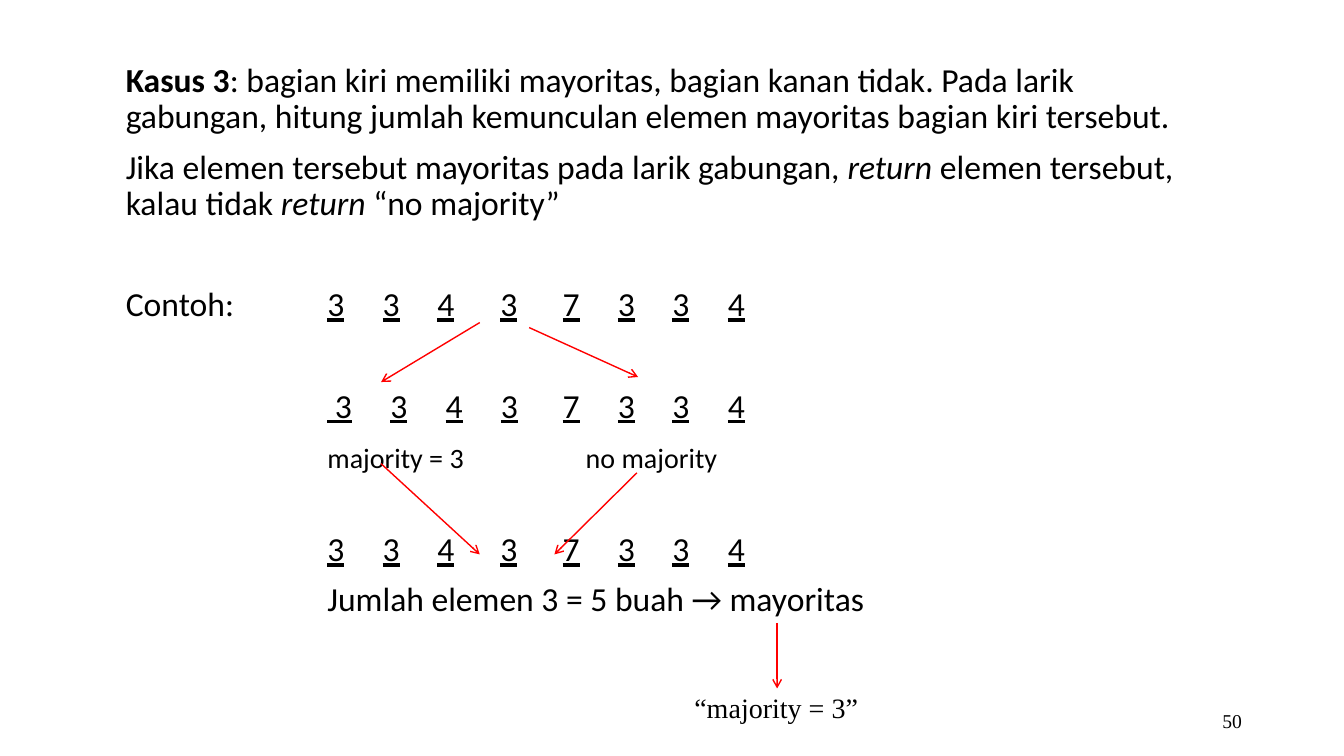
from lxml.etree import SubElement
from pptx import Presentation
from pptx.dml.color import RGBColor
from pptx.enum.shapes import MSO_CONNECTOR
from pptx.enum.text import MSO_ANCHOR, PP_ALIGN
from pptx.oxml.ns import qn
from pptx.util import Pt

COLORS = {"text": "000000", "arrow": "FF0000"}
BODY, SERIF = "Calibri", "Times New Roman"

# Tab stops, measured from the left edge of the text
WHOLE = [144, 183.5, 222.5, 267.5, 312, 351.5, 390.5, 430]
HALVES = [144, 189, 228.5, 268] + WHOLE[4:]
LABELS = [144, 328.5]
ARRAY = "3\t3\t4\t3\t7\t3\t3\t4"

# Each paragraph: runs of (text, style), space before, size, tab stops
LINES = [
    ([("Kasus 3", "b"),
      (": bagian kiri memiliki mayoritas, bagian kanan tidak. Pada larik "
       "gabungan, hitung jumlah kemunculan elemen mayoritas bagian kiri "
       "tersebut.", "")], 0, 24, []),
    ([("Jika elemen tersebut mayoritas pada larik gabungan, ", ""),
      ("return ", "i"), ("elemen tersebut, kalau tidak ", ""),
      ("return", "i"), (" “no majority”", "")], 10, 24, []),
    ([("Contoh:\t", ""), (ARRAY, "u")], 46.5, 24, WHOLE),
    ([("\t", ""), (" 3\t3\t4\t3", "u"), ("\t", ""),
      ("7\t3\t3\t4", "u")], 46.5, 24, HALVES),
    ([("\tmajority = 3\tno majority", "")], 13.5, 20, LABELS),
    ([("\t", ""), (ARRAY, "u")], 41.5, 24, WHOLE),
    ([("\tJumlah elemen 3 = 5 buah → mayoritas", "")], 10, 24, LABELS),
]
RESULT = [([("“majority = 3”", "")], 0, 20, [])]
NUMBER = [([("50", "")], 0, 14, [])]

# Arrows: start x, start y, end x, end y
ARROWS = [
    (342.7, 230.4, 272.2, 272.9),
    (378, 234, 455.8, 269.3),
    (272.2, 331.2, 342.7, 396),
    (455, 337.7, 396, 396),
    (555.1, 445, 555.1, 491.8),
]


def write(slide, lines, *, at, font=BODY, space=1.0, align=PP_ALIGN.LEFT,
          anchor=MSO_ANCHOR.TOP, wrap=True):
    box = slide.shapes.add_textbox(*map(Pt, at))
    frame = box.text_frame
    frame.word_wrap, frame.vertical_anchor = wrap, anchor
    for i, (runs, before, size, tabs) in enumerate(lines):
        para = frame.add_paragraph() if i else frame.paragraphs[0]
        if tabs:
            stops = SubElement(para._p.get_or_add_pPr(), qn("a:tabLst"))
            for stop in tabs:
                SubElement(stops, qn("a:tab"), pos=str(Pt(stop)), algn="l")
        para.alignment, para.line_spacing = align, space
        para.space_before = Pt(before)
        for text, style in runs:
            run = para.add_run()
            run.text = text
            run.font.name, run.font.size = font, Pt(size)
            run.font.bold = "b" in style
            run.font.italic = "i" in style
            run.font.underline = "u" in style
            run.font.color.rgb = RGBColor.from_string(COLORS["text"])


def arrow(slide, ends):
    link = slide.shapes.add_connector(MSO_CONNECTOR.STRAIGHT, *map(Pt, ends))
    link.line.color.rgb = RGBColor.from_string(COLORS["arrow"])
    link.line.width = Pt(1)
    SubElement(link.line._get_or_add_ln(), qn("a:tailEnd"), type="arrow")
    SubElement(link._element.spPr, qn("a:effectLst"))


def main():
    deck = Presentation()
    deck.slide_width, deck.slide_height = Pt(960), Pt(540)
    slide = deck.slides.add_slide(deck.slide_layouts[6])
    write(slide, LINES, at=(82.8, 41.8, 794.9, 437.8), space=0.9)
    write(slide, NUMBER, at=(678.2, 500.4, 216, 28.8), font=SERIF,
          align=PP_ALIGN.RIGHT, anchor=MSO_ANCHOR.MIDDLE)
    write(slide, RESULT, at=(488.9, 489.6, 132.5, 31.7), font=SERIF,
          wrap=False)
    for ends in ARROWS:
        arrow(slide, ends)
    deck.save("out.pptx")


if __name__ == "__main__":
    main()
